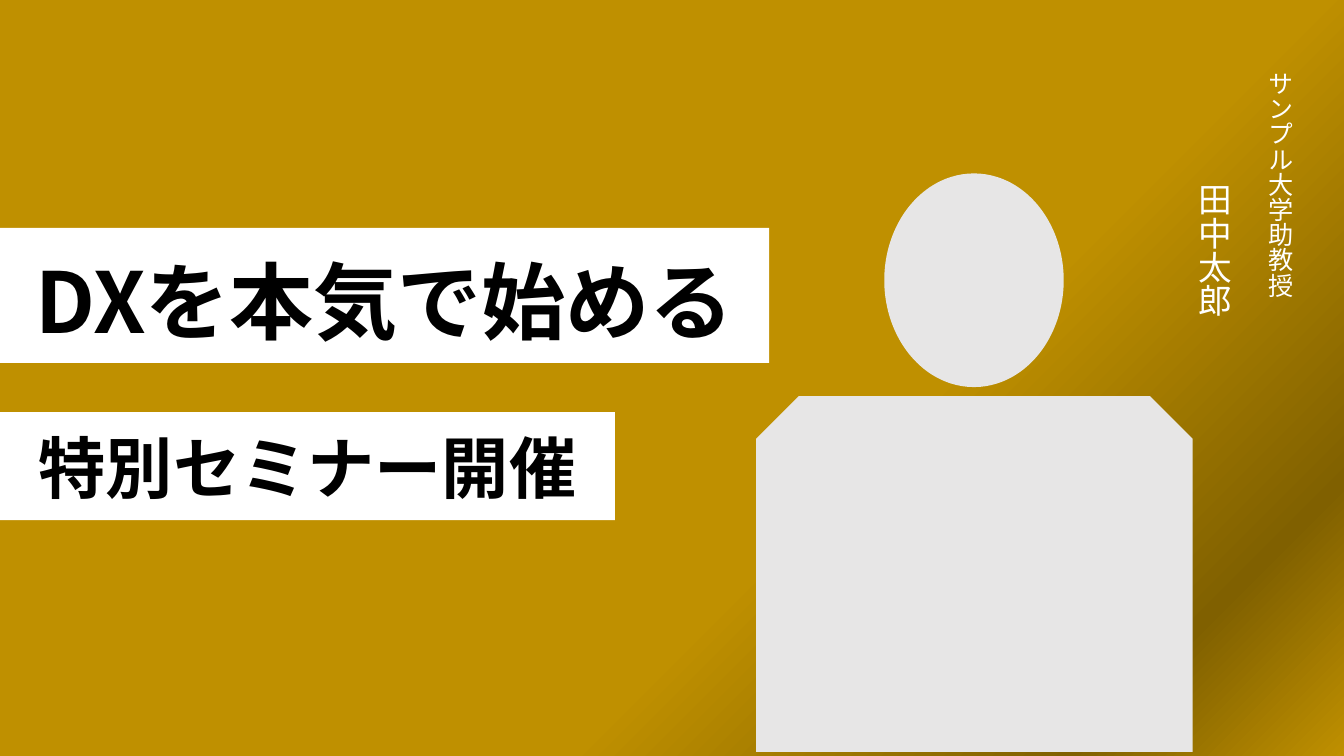
from lxml.etree import SubElement
from pptx import Presentation
from pptx.dml.color import RGBColor
from pptx.enum.lang import MSO_LANGUAGE_ID
from pptx.enum.shapes import MSO_SHAPE
from pptx.enum.text import MSO_AUTO_SIZE, PP_ALIGN
from pptx.oxml.ns import qn
from pptx.util import Inches, Pt

COLORS = {
    "gold": "BF9000",
    "dark gold": "806000",
    "white": "FFFFFF",
    "black": "000000",
    "grey": "E7E6E6",
}
FONT = "Noto Sans CJK JP"


def add_filled_shape(shapes, kind, box, color):
    shape = shapes.add_shape(kind, *[Inches(length) for length in box])
    shape.shadow.inherit = False
    shape.line.fill.background()
    shape.fill.solid()
    shape.fill.fore_color.rgb = RGBColor.from_string(COLORS[color])
    return shape


def add_text(text, box, size, color, bold=False, vertical=False):
    text_box = slide.shapes.add_textbox(*[Inches(length) for length in box])
    frame = text_box.text_frame
    frame.word_wrap = True
    frame.auto_size = MSO_AUTO_SIZE.SHAPE_TO_FIT_TEXT
    paragraph = frame.paragraphs[0]
    if vertical:
        frame._txBody.bodyPr.set("vert", "eaVert")
    else:
        paragraph.alignment = PP_ALIGN.CENTER
    run = paragraph.add_run()
    run.text = text
    font = run.font
    font.size = Pt(size)
    font.bold = bold
    font.color.rgb = RGBColor.from_string(COLORS[color])
    font.name = FONT
    font.language_id = MSO_LANGUAGE_ID.JAPANESE
    SubElement(run._r.rPr, qn("a:ea"), typeface=FONT)


presentation = Presentation()
presentation.slide_width = Inches(13.33)
presentation.slide_height = Inches(7.5)
slide = presentation.slides.add_slide(presentation.slide_layouts[6])

# Diagonal gold gradient over the whole slide
background = add_filled_shape(slide.shapes, MSO_SHAPE.RECTANGLE, (0, 0, 13.33, 7.5), "gold")
background.fill.gradient()
background.fill.gradient_angle = 315
stop_list = background._element.spPr.find(qn("a:gradFill")).find(qn("a:gsLst"))
for stop in list(stop_list):
    stop_list.remove(stop)
for percent, color in [(0, "gold"), (63, "gold"), (87, "dark gold"), (100, "gold")]:
    stop = SubElement(stop_list, qn("a:gs"), pos=str(percent * 1000))
    SubElement(stop, qn("a:srgbClr"), val=COLORS[color])

# White title bands
for band in [(0, 2.26, 7.63, 1.34), (0, 4.09, 6.1, 1.07)]:
    add_filled_shape(slide.shapes, MSO_SHAPE.RECTANGLE, band, "white")

# Titles
add_text("DXを本気で始める", (0, 2.43, 7.63, 1.11), 60, "black", bold=True)
add_text("特別セミナー開催", (0, 4.18, 6.1, 0.91), 48, "black", bold=True)

# Speaker, set vertically
add_text("サンプル大学助教授", (12.3, 0.61, 0.6, 2.83), 18, "white", vertical=True)
add_text("田中太郎", (11.69, 1.72, 0.6, 1.72), 24, "white", vertical=True)

# Speaker silhouette
silhouette = slide.shapes.add_group_shape()
add_filled_shape(silhouette.shapes, MSO_SHAPE.OVAL, (8.77, 1.72, 1.78, 2.12), "grey")
body = add_filled_shape(
    silhouette.shapes, MSO_SHAPE.SNIP_2_SAME_RECTANGLE, (7.5, 3.93, 4.33, 3.53), "grey"
)
body.adjustments[0] = 0.12
body.adjustments[1] = 0

presentation.save("out.pptx")
